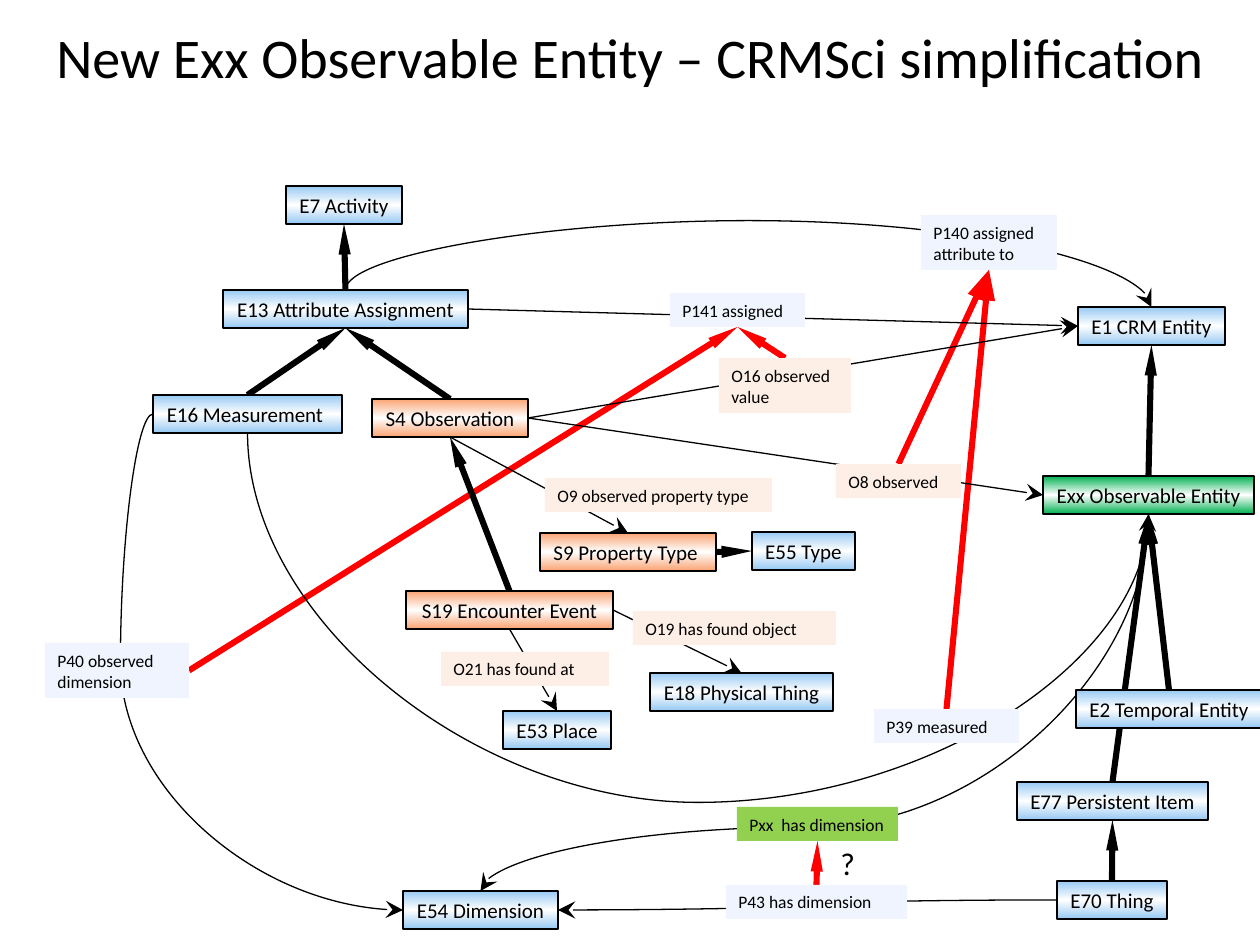
from copy import deepcopy

from lxml.etree import SubElement
from pptx import Presentation
from pptx.dml.color import RGBColor
from pptx.enum.shapes import MSO_CONNECTOR as Link, MSO_SHAPE as Preset
from pptx.enum.text import MSO_ANCHOR as Anchor, MSO_AUTO_SIZE as AutoSize, PP_ALIGN as Align
from pptx.oxml.ns import qn
from pptx.util import Pt

PX = 914400 / 126
COLORS = {
    "text": "000000", "line": "000000", "override": "FF0000",
    "core": "97C9F3", "science": "FAA372", "new": "00B050", "shine": "FFFFFF",
    "core_label": "F0F4FE", "science_label": "FEEFE6", "new_label": "92D050",
}
SIDES = {"top": 0, "left": 1, "bottom": 2, "right": 3}
CLASS_HEIGHT = 38

# Classes: text, colour, left, top, width
CLASSES = [
    ("E7 Activity", "core", 286, 186, 116),
    ("E13 Attribute Assignment", "core", 223, 290, 245),
    ("E16 Measurement ", "core", 153, 395, 189),
    ("S4 Observation", "science", 372, 399, 156),
    ("E1 CRM Entity", "core", 1078, 307, 147),
    ("Exx Observable Entity", "new", 1043, 476, 211),
    ("S9 Property Type ", "science", 540, 533, 176),
    ("E55 Type", "core", 752, 532, 103),
    ("S19 Encounter Event", "science", 406, 591, 207),
    ("E18 Physical Thing", "core", 650, 673, 183),
    ("E53 Place", "core", 503, 711, 108),
    ("E2 Temporal Entity", "core", 1076, 690, 186),
    ("E77 Persistent Item", "core", 1017, 782, 191),
    ("E70 Thing", "core", 1057, 881, 110),
    ("E54 Dimension", "core", 403, 891, 155),
]

# Properties: text, colour, left, top, width, height
PROPERTIES = [
    ("P140 assigned\nattribute to", "core_label", 921, 215, 136, 55),
    ("P141 assigned", "core_label", 670, 293, 135, 34),
    ("O16 observed\nvalue", "science_label", 719, 358, 132, 55),
    ("O8 observed", "science_label", 836, 464, 125, 34),
    ("O9 observed property type", "science_label", 545, 478, 227, 34),
    ("O19 has found object", "science_label", 633, 611, 203, 34),
    ("O21 has found at", "science_label", 441, 652, 168, 34),
    ("P40 observed dimension", "core_label", 45, 643, 144, 55),
    ("P39 measured", "core_label", 874, 709, 145, 34),
    ("Pxx  has dimension", "new_label", 737, 807, 161, 34),
    ("P43 has dimension", "core_label", 726, 885, 181, 34),
]

# Line styles: colour, weight, arrowhead, head width
STYLES = {
    "subclass": ("line", 3.5, "triangle", "sm"),
    "subproperty": ("override", 3.5, "triangle", "sm"),
    "wide subproperty": ("override", 3.5, "triangle", "med"),
    "property": ("line", 0.75, "stealth", "lg"),
}

# Straight links: style, from, side, to, side
STRAIGHT = [
    ("subproperty", "P40", "right", "P141", "bottom"),
    ("subproperty", "O16", "top", "P141", "bottom"),
    ("subproperty", "P43", "top", "Pxx", "bottom"),
    ("wide subproperty", "P39", "top", "P140", "bottom"),
    ("wide subproperty", "O8", "top", "P140", "bottom"),
    ("subclass", "E13", "top", "E7", "bottom"),
    ("subclass", "E16", "top", "E13", "bottom"),
    ("subclass", "S4", "top", "E13", "bottom"),
    ("subclass", "S19", "top", "S4", "bottom"),
    ("subclass", "S9", "right", "E55", "left"),
    ("subclass", "Exx", "top", "E1", "bottom"),
    ("subclass", "E77", "top", "Exx", "bottom"),
    ("subclass", "E2", "top", "Exx", "bottom"),
    ("subclass", "E70", "top", "E77", "bottom"),
    ("property", "E13", "right", "E1", "left"),
    ("property", "S4", "right", "E1", "left"),
    ("property", "S4", "right", "Exx", "left"),
    ("property", "S4", "bottom", "S9", "top"),
    ("property", "S19", "right", "E18", "top"),
    ("property", "S19", "bottom", "E53", "top"),
]

# Curved links: from, side, to, side, rotation, flips, bend
CURVED = [
    ("E16", "left", "E54", "left", 180, ("flipH", "flipV"), -0.13),
    ("Exx", "bottom", "E54", "top", 90, (), 0.83),
    ("E13", "top", "E1", "top", 270, ("flipH",), -4.08),
    ("E16", "bottom", "Exx", "bottom", 270, ("flipH",), 4.56),
    ("E70", "left", "E54", "right", 180, ("flipV",), 0.5),
]


def emu(*lengths):
    return [round(length * PX) for length in lengths]


def rgb(name):
    return RGBColor.from_string(COLORS[name])


def set_all(target, values):
    for attribute, value in values.items():
        setattr(target, attribute, value)


def write(shape, text, size, align=Align.LEFT, wrap=False):
    frame = shape.text_frame
    frame.text = text
    set_all(frame, {"word_wrap": wrap, "auto_size": AutoSize.SHAPE_TO_FIT_TEXT,
                    "vertical_anchor": Anchor.MIDDLE})
    for paragraph in frame.paragraphs:
        paragraph.alignment = align
        set_all(paragraph.font, {"name": "Calibri", "size": Pt(size)})
        paragraph.font.color.rgb = rgb("text")


def add_text(slide, text, size, *place):
    write(slide.shapes.add_textbox(*emu(*place)), text, size)


def add_rect(slide, *place):
    rect = slide.shapes.add_shape(Preset.RECTANGLE, *emu(*place))
    rect.shadow.inherit = False
    return rect


def add_class(slide, text, color, left, top, width):
    box = add_rect(slide, left, top, width, CLASS_HEIGHT)
    box.fill.gradient()
    box.fill.gradient_angle = 90
    # A third stop makes the shine in the middle
    stops = box._element.spPr.find(qn("a:gradFill")).find(qn("a:gsLst"))
    stops.append(deepcopy(stops[0]))
    for stop, position, tone in zip(box.fill.gradient_stops, (0, 0.5, 1), (color, "shine", color)):
        stop.position = position
        stop.color.rgb = rgb(tone)
    box.line.color.rgb = rgb("line")
    box.line.width = Pt(0.75)
    write(box, text, 12, Align.CENTER)
    return box


def add_property(slide, text, color, *place):
    label = add_rect(slide, *place)
    label.fill.solid()
    label.fill.fore_color.rgb = rgb(color)
    label.line.fill.background()
    write(label, text, 10, wrap=color != "new_label")
    return label


def add_link(slide, kind, style, start, start_side, end, end_side):
    color, weight, head, head_width = STYLES[style]
    link = slide.shapes.add_connector(kind, 0, 0, 0, 0)
    link.begin_connect(start, SIDES[start_side])
    link.end_connect(end, SIDES[end_side])
    link.line.color.rgb = rgb(color)
    link.line.width = Pt(weight)
    SubElement(link.line._get_or_add_ln(), qn("a:tailEnd"), type=head, w=head_width, len="lg")
    SubElement(link._element.spPr, qn("a:effectLst"))
    return link


def bend_link(link, rotation, flips, bend):
    left, top, width, height = link.left, link.top, link.width, link.height
    if rotation % 180:
        shift = (width - height) // 2
        left, top, width, height = left + shift, top - shift, height, width
    set_all(link, {"left": left, "top": top, "width": width, "height": height})
    frame = link._element.spPr.find(qn("a:xfrm"))
    for flip in ("flipH", "flipV"):
        frame.set(flip, str(int(flip in flips)))
    frame.set("rot", str(rotation * 60000))
    guides = link._element.spPr.find(qn("a:prstGeom")).find(qn("a:avLst"))
    SubElement(guides, qn("a:gd"), name="adj1", fmla=f"val {round(bend * 100000)}")


def main():
    deck = Presentation()
    deck.slide_width, deck.slide_height = emu(1260, 945)
    slide = deck.slides.add_slide(deck.slide_layouts[6])

    # Properties lie below classes; both are found by their code
    nodes = {}
    for row in PROPERTIES:
        nodes[row[0].split()[0]] = add_property(slide, *row)
    for row in CLASSES:
        nodes[row[0].split()[0]] = add_class(slide, *row)

    # Links
    links = []
    for style, start, start_side, end, end_side in STRAIGHT:
        links.append(add_link(slide, Link.STRAIGHT, style,
                              nodes[start], start_side, nodes[end], end_side))
    for start, start_side, end, end_side, *curve in CURVED:
        link = add_link(slide, Link.CURVE, "property",
                        nodes[start], start_side, nodes[end], end_side)
        bend_link(link, *curve)
        links.append(link)

    # Send the links behind the nodes, in their own order
    tree = slide.shapes._spTree
    for index, link in enumerate(links, start=2):
        tree.insert(index, link._element)

    # Title and open question
    add_text(slide, "New Exx Observable Entity – CRMSci simplification", 32, 44, 16, 1186, 81)
    add_text(slide, "?", 18, 828, 838, 40, 50)
    deck.save("out.pptx")


if __name__ == "__main__":
    main()
